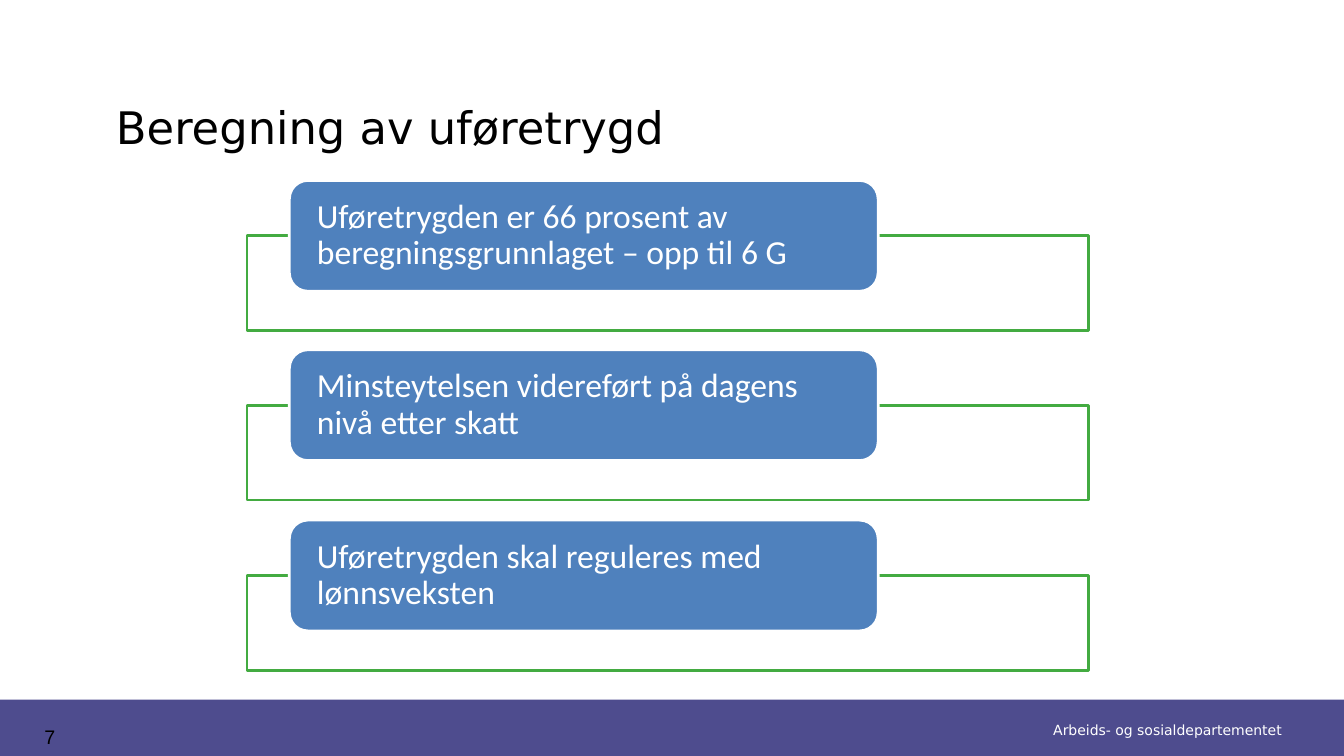
from dataclasses import dataclass

from pptx import Presentation
from pptx.dml.color import RGBColor
from pptx.enum.shapes import MSO_SHAPE as Preset
from pptx.enum.text import MSO_ANCHOR as Anchor, PP_ALIGN as Align
from pptx.oxml.ns import qn
from pptx.shapes.autoshape import Shape
from pptx.slide import Slide
from pptx.text.text import TextFrame
from pptx.util import Emu, Pt

EMU_PER_PX = 9144  # 100 px to the inch


@dataclass(frozen=True)
class TextStyle:
    font: str
    size: int
    color: str
    align: Align = Align.LEFT
    anchor: Anchor = Anchor.TOP
    line_spacing: float = 1.0


@dataclass(frozen=True)
class Theme:
    band: str = "4E4C8E"
    frame: str = "FFFFFF"
    frame_line: str = "43AB41"
    label: str = "4F81BD"
    label_line: str = "FFFFFF"
    line_width: int = 2
    title_text: TextStyle = TextStyle("DejaVu Sans", 32, "000000", anchor=Anchor.BOTTOM)
    label_text: TextStyle = TextStyle("Calibri", 24, "FFFFFF", anchor=Anchor.MIDDLE,
                                      line_spacing=0.9)
    footer_text: TextStyle = TextStyle("DejaVu Sans", 10, "FFFFFF", Align.RIGHT, Anchor.MIDDLE)
    number_text: TextStyle = TextStyle("Arial", 14, "000000", Align.CENTER)


@dataclass(frozen=True)
class Box:
    left: int
    top: int
    width: int
    height: int

    def emu(self) -> tuple[Emu, Emu, Emu, Emu]:
        return px(self.left), px(self.top), px(self.width), px(self.height)


THEME = Theme()
SLIDE = Box(0, 0, 1333, 750)
BAND = Box(0, 694, 1333, 56)
TITLE = Box(105, 32, 1113, 125)
DEPARTMENT = Box(819, 711, 462, 27)
PAGE_NUMBER = Box(10, 714, 79, 29)

# Each rule is a label overlapping the top edge of a frame
RULES = (
    "Uføretrygden er 66 prosent av beregningsgrunnlaget – opp til 6 G",
    "Minsteytelsen videreført på dagens nivå etter skatt",
    "Uføretrygden skal reguleres med lønnsveksten",
)
FIRST_LABEL_TOP = 179
TWO_ROWS = 337
FRAME_DROP = 55


def px(length: int) -> Emu:
    return Emu(length * EMU_PER_PX)


def rgb(color: str) -> RGBColor:
    return RGBColor.from_string(color)


def write(frame: TextFrame, text: str, style: TextStyle) -> None:
    frame.word_wrap = True
    frame.vertical_anchor = style.anchor
    paragraph = frame.paragraphs[0]
    paragraph.alignment = style.align
    paragraph.line_spacing = style.line_spacing
    run = paragraph.add_run()
    run.text = text
    run.font.name = style.font
    run.font.size = Pt(style.size)
    run.font.color.rgb = rgb(style.color)


def add_block(slide: Slide, preset: Preset, box: Box, fill: str, line: str | None = None) -> Shape:
    block = slide.shapes.add_shape(preset, *box.emu())
    block.shadow.inherit = False
    block.fill.solid()
    block.fill.fore_color.rgb = rgb(fill)
    if line is None:
        block.line.fill.background()
    else:
        block.line.color.rgb = rgb(line)
        block.line.width = Pt(THEME.line_width)
    return block


def set_opacity(block: Shape, percent: int) -> None:
    color = block.fill._xPr.find(qn("a:solidFill"))[0]
    alpha = color.makeelement(qn("a:alpha"), {"val": str(percent * 1000)})
    color.append(alpha)


def add_text(slide: Slide, box: Box, text: str, style: TextStyle) -> None:
    write(slide.shapes.add_textbox(*box.emu()).text_frame, text, style)


def add_rule(slide: Slide, top: int, text: str) -> None:
    frame = add_block(slide, Preset.RECTANGLE, Box(245, top + FRAME_DROP, 835, 94),
                      THEME.frame, THEME.frame_line)
    set_opacity(frame, 90)
    label = add_block(slide, Preset.ROUNDED_RECTANGLE, Box(287, top, 584, 110),
                      THEME.label, THEME.label_line)
    body = label.text_frame
    body.margin_left = body.margin_right = px(22)
    body.margin_top = body.margin_bottom = 0
    write(body, text, THEME.label_text)


def main() -> None:
    deck = Presentation()
    deck.slide_width, deck.slide_height = px(SLIDE.width), px(SLIDE.height)
    slide = deck.slides.add_slide(deck.slide_layouts[5])

    # Footer band
    add_block(slide, Preset.RECTANGLE, BAND, THEME.band)
    add_text(slide, DEPARTMENT, "Arbeids- og sosialdepartementet", THEME.footer_text)
    add_text(slide, PAGE_NUMBER, "7", THEME.number_text)

    # Title
    title = slide.shapes.title
    title.left, title.top, title.width, title.height = TITLE.emu()
    write(title.text_frame, "Beregning av uføretrygd", THEME.title_text)

    # Rules
    for index, rule in enumerate(RULES):
        add_rule(slide, FIRST_LABEL_TOP + index * TWO_ROWS // 2, rule)

    deck.save("out.pptx")


if __name__ == "__main__":
    main()
